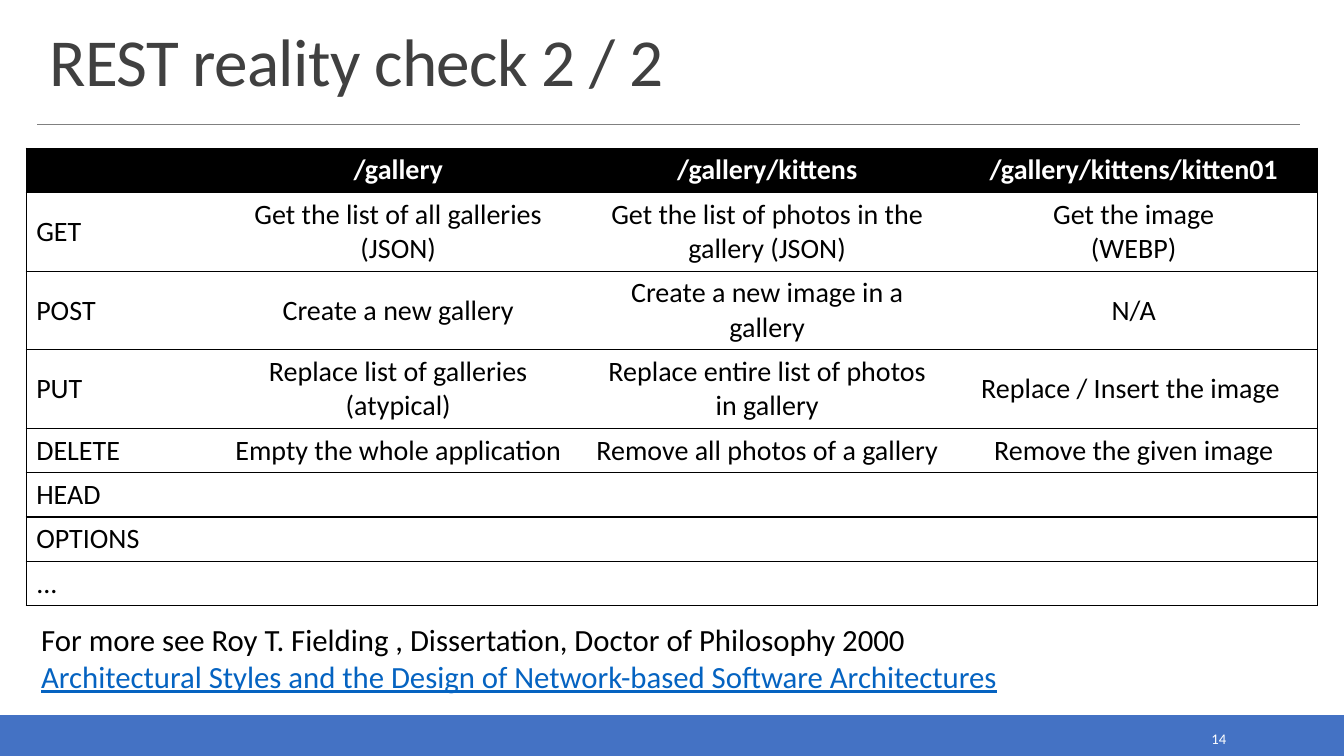
"""Builds the slide that maps HTTP methods onto gallery resources."""
from dataclasses import dataclass

from pptx import Presentation
from pptx.dml.color import RGBColor
from pptx.enum.shapes import MSO_CONNECTOR, MSO_SHAPE
from pptx.enum.text import MSO_ANCHOR as Anchor, MSO_AUTO_SIZE as AutoSize, PP_ALIGN as Align
from pptx.oxml.ns import qn
from pptx.util import Inches, Pt
from lxml.etree import SubElement

FONT = "Calibri"
BLACK, WHITE, BLUE = "000000", "FFFFFF", "4472C4"
SINGLE, DOUBLE = 0.44, 0.78


@dataclass(frozen=True)
class Style:
    size: float
    color: str = BLACK
    bold: bool = False
    underline: bool = False


@dataclass(frozen=True)
class Method:
    name: str
    actions: tuple[str, ...] = ("", "", "")
    height: float = SINGLE


HEADER = Method("", ("/gallery", "/gallery/kittens", "/gallery/kittens/kitten01"))
METHODS = (
    Method("GET", ("Get the list of all galleries\v(JSON)",
                   "Get the list of photos in the gallery (JSON)",
                   "Get the image\v(WEBP)"), DOUBLE),
    Method("POST", ("Create a new gallery", "Create a new image in a gallery", "N/A"), DOUBLE),
    Method("PUT", ("Replace list of galleries\n(atypical)",
                   "Replace entire list of photos in gallery",
                   "Replace / Insert the image "), DOUBLE),
    Method("DELETE", ("Empty the whole application", "Remove all photos of a gallery",
                      "Remove the given image")),
    Method("HEAD"),
    Method("OPTIONS"),
    Method("..."),
)
COLUMN_WIDTHS = (1.84, 3.7, 3.62, 3.65)


def rgb(color: str) -> RGBColor:
    return RGBColor.from_string(color)


def add_run(paragraph, text: str, style: Style):
    run = paragraph.add_run()
    run.text = text
    font = run.font
    font.name, font.size, font.bold = FONT, Pt(style.size), style.bold
    font.underline = style.underline
    font.color.rgb = rgb(style.color)
    return run


def write(frame, text: str, style: Style, align: Align = Align.LEFT) -> None:
    for index, line in enumerate(text.split("\n")):
        paragraph = frame.add_paragraph() if index else frame.paragraphs[0]
        paragraph.alignment = align
        for part_index, part in enumerate(line.split("\v")):
            if part_index:
                paragraph.add_line_break()
            add_run(paragraph, part, style)


def add_text_frame(slide, left: float, top: float, width: float, height: float):
    box = slide.shapes.add_textbox(Inches(left), Inches(top), Inches(width), Inches(height))
    box.text_frame.word_wrap = True
    return box.text_frame


def set_borders(cell, sides: str) -> None:
    properties = cell._tc.get_or_add_tcPr()
    for side in "LRTB":
        line = SubElement(properties, qn(f"a:ln{side}"), w=str(Pt(1)))
        if side in sides:
            fill = SubElement(line, qn("a:solidFill"))
            SubElement(fill, qn("a:srgbClr"), val=BLACK)
        else:
            SubElement(line, qn("a:noFill"))


def add_footer(slide) -> None:
    band = slide.shapes.add_shape(MSO_SHAPE.RECTANGLE, 0, Inches(7.1), Inches(13.33), Inches(0.4))
    band.shadow.inherit = False
    band.fill.solid()
    band.fill.fore_color.rgb = band.line.color.rgb = rgb(BLUE)
    band.line.width = Pt(1.25)
    number = add_text_frame(slide, 10.83, 7.19, 1.43, 0.28)
    number.vertical_anchor = Anchor.MIDDLE
    write(number, "14", Style(10.5, WHITE), Align.RIGHT)


def add_title(slide) -> None:
    rule = slide.shapes.add_connector(
        MSO_CONNECTOR.STRAIGHT, Inches(0.37), Inches(1.23), Inches(12.89), Inches(1.23))
    rule.line.color.rgb = rgb("808080")
    rule.line.width = Pt(0.5)
    SubElement(rule._element.spPr, qn("a:effectLst"))
    title = slide.shapes.title
    title.left, title.top = Inches(0.39), Inches(0.2)
    title.width, title.height = Inches(12.52), Inches(0.84)
    frame = title.text_frame
    frame.auto_size, frame.vertical_anchor = AutoSize.NONE, Anchor.BOTTOM
    heading = frame.paragraphs[0]
    heading.alignment, heading.line_spacing = Align.LEFT, 0.85
    run = add_run(heading, "REST reality check 2 / 2", Style(48, "404040"))
    run.font._element.set("spc", "-50")


def add_methods_table(slide) -> None:
    rows = (HEADER, *METHODS)
    table = slide.shapes.add_table(
        len(rows), len(COLUMN_WIDTHS), Inches(0.26), Inches(1.47),
        Inches(sum(COLUMN_WIDTHS)), Inches(sum(row.height for row in rows))).table
    table.horz_banding = False
    for column, width in zip(table.columns, COLUMN_WIDTHS):
        column.width = Inches(width)
    last = len(COLUMN_WIDTHS) - 1
    for row_index, method in enumerate(rows):
        table.rows[row_index].height = Inches(method.height)
        is_header = method is HEADER
        style = Style(20, WHITE if is_header else BLACK, bold=is_header)
        for column_index, text in enumerate((method.name, *method.actions)):
            cell = table.cell(row_index, column_index)
            cell.vertical_anchor = Anchor.MIDDLE
            set_borders(cell, "TB" + "L" * (column_index == 0) + "R" * (column_index == last))
            cell.fill.solid()
            cell.fill.fore_color.rgb = rgb(BLACK if is_header else WHITE)
            if text:
                write(cell.text_frame, text, style, Align.CENTER if column_index else Align.LEFT)
            else:
                cell.text_frame.paragraphs[0].font.size = Pt(style.size)


def add_reference(slide) -> None:
    paragraph = add_text_frame(slide, 0.31, 6.11, 11.08, 0.84).paragraphs[0]
    add_run(paragraph, "For more see Roy T. Fielding , Dissertation, Doctor of Philosophy 2000",
            Style(22))
    paragraph.add_line_break()
    add_run(paragraph,
            "Architectural Styles and the Design of Network-based Software Architectures",
            Style(22, "0563C1", underline=True))


def main() -> None:
    deck = Presentation()
    deck.slide_width, deck.slide_height = Inches(13.33), Inches(7.5)
    slide = deck.slides.add_slide(deck.slide_layouts[5])
    add_footer(slide)
    add_title(slide)
    add_methods_table(slide)
    add_reference(slide)
    deck.save("out.pptx")


if __name__ == "__main__":
    main()
